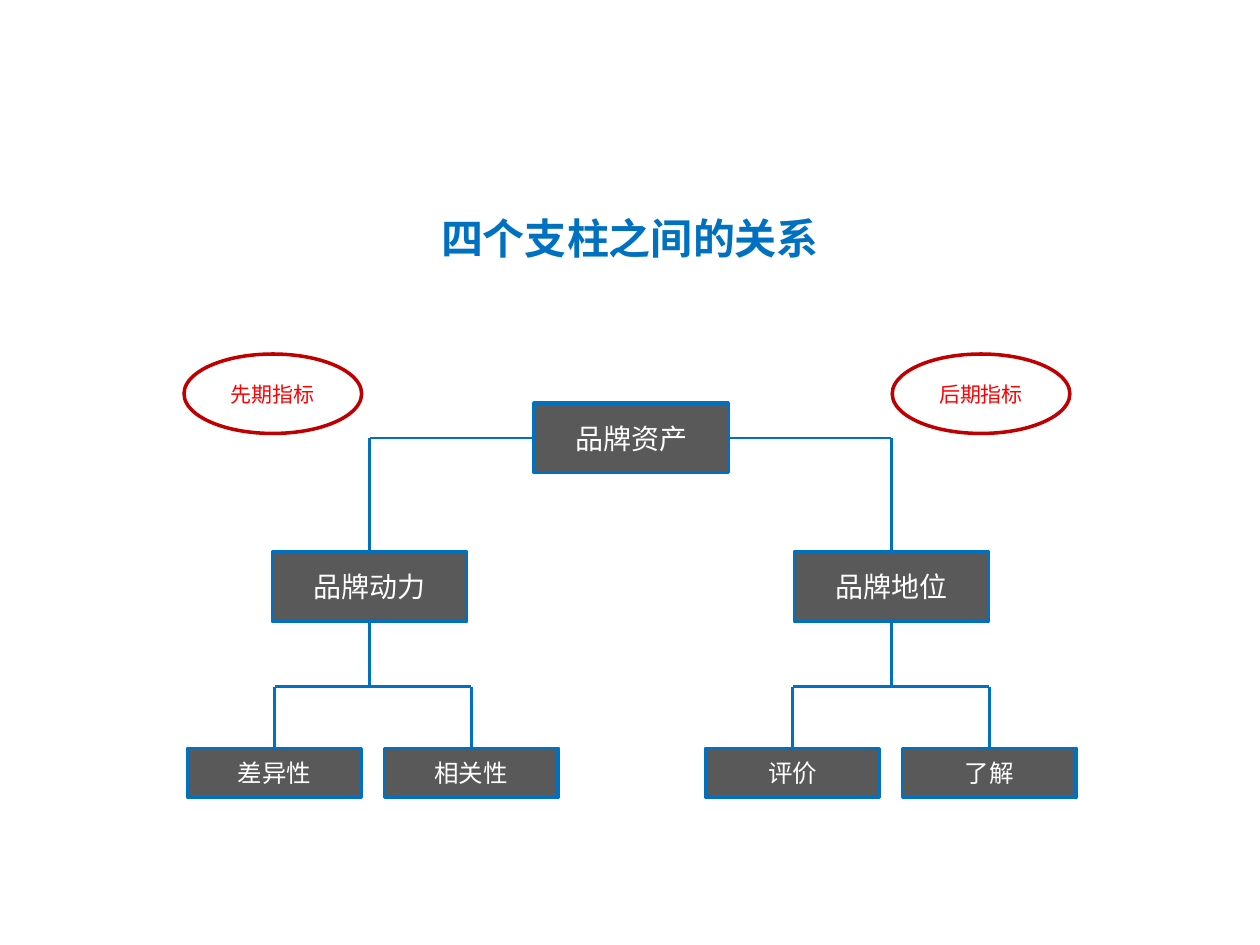
from pptx import Presentation
from pptx.dml.color import RGBColor
from pptx.enum.shapes import MSO_CONNECTOR as Connector, MSO_SHAPE as Shape
from pptx.enum.text import MSO_ANCHOR as Anchor, PP_ALIGN as Align
from pptx.oxml.ns import qn
from pptx.util import Pt
from lxml.etree import SubElement

FONT = "Noto Sans CJK SC"
COLORS = {
    "blue": "0070C0",
    "gray": "595959",
    "white": "FFFFFF",
    "ring": "C00000",
    "red": "FF0000",
}
ROOT_X, ROOT_Y = 360.7, 250.2
BRANCH_Y, BAR_Y, LEAF_Y = 335.2, 392.4, 441.7
NODE_SIZE, LEAF_SIZE, RING_SIZE = (111, 39.6), (99.4, 28), (101.5, 45.4)
BRANCHES = [
    ("品牌动力", 211.2, [("差异性", 157), ("相关性", 269.3)]),
    ("品牌地位", 509.4, [("评价", 453), ("了解", 565.3)]),
]
INDICATORS = [("先期指标", 155.9), ("后期指标", 560.6)]


def color(name):
    return RGBColor.from_string(COLORS[name])


def set_text(box, text, size, name, bold=False):
    frame = box.text_frame
    frame.text = text
    frame.word_wrap = True
    frame.vertical_anchor = Anchor.MIDDLE
    para = frame.paragraphs[0]
    para.alignment = Align.CENTER
    span = para.runs[0]
    span.font.name = FONT
    span.font.size = Pt(size)
    span.font.bold = bold
    span.font.color.rgb = color(name)
    east_asian = SubElement(span.font._element, qn("a:ea"))
    east_asian.set("typeface", FONT)


def add_title(page, text):
    box = page.shapes.add_textbox(Pt(213.8), Pt(118), Pt(292.4), Pt(36))
    set_text(box, text, 24, "blue", bold=True)


def add_outlined(page, kind, center_x, center_y, size, line):
    width, height = size
    box = page.shapes.add_shape(
        kind, Pt(center_x - width / 2), Pt(center_y - height / 2), Pt(width), Pt(height)
    )
    box.shadow.inherit = False
    box.line.color.rgb = color(line)
    box.line.width = Pt(2)
    return box


def add_node(page, text, center_x, center_y, size, font_size):
    box = add_outlined(page, Shape.RECTANGLE, center_x, center_y, size, "blue")
    box.fill.solid()
    box.fill.fore_color.rgb = color("gray")
    set_text(box, text, font_size, "white")
    return box


def add_indicator(page, text, center_x):
    ring = add_outlined(page, Shape.OVAL, center_x, 225, RING_SIZE, "ring")
    ring.fill.background()
    set_text(ring, text, 12, "red")


def add_line(page, x1, y1, x2, y2):
    line = page.shapes.add_connector(Connector.STRAIGHT, Pt(x1), Pt(y1), Pt(x2), Pt(y2))
    line.line.color.rgb = color("blue")
    line.line.width = Pt(1.5)
    SubElement(line._element.spPr, qn("a:effectLst"))
    return line


def add_branch(page, text, center_x, leaves):
    add_line(page, center_x, ROOT_Y, center_x, BAR_Y)
    add_node(page, text, center_x, BRANCH_Y, NODE_SIZE, 16)
    add_line(page, leaves[0][1], BAR_Y, leaves[-1][1], BAR_Y)
    for leaf_text, leaf_x in leaves:
        leaf = add_node(page, leaf_text, leaf_x, LEAF_Y, LEAF_SIZE, 14)
        drop = add_line(page, leaf_x, BAR_Y, leaf_x, LEAF_Y - LEAF_SIZE[1] / 2)
        drop.end_connect(leaf, 0)


def main():
    deck = Presentation()
    deck.slide_width, deck.slide_height = Pt(720), Pt(540)
    page = deck.slides.add_slide(deck.slide_layouts[6])
    add_title(page, "四个支柱之间的关系")
    add_line(page, BRANCHES[0][1], ROOT_Y, BRANCHES[-1][1], ROOT_Y)
    for text, center_x, leaves in BRANCHES:
        add_branch(page, text, center_x, leaves)
    add_node(page, "品牌资产", ROOT_X, ROOT_Y, NODE_SIZE, 16)
    for text, center_x in INDICATORS:
        add_indicator(page, text, center_x)
    deck.save("out.pptx")


if __name__ == "__main__":
    main()
